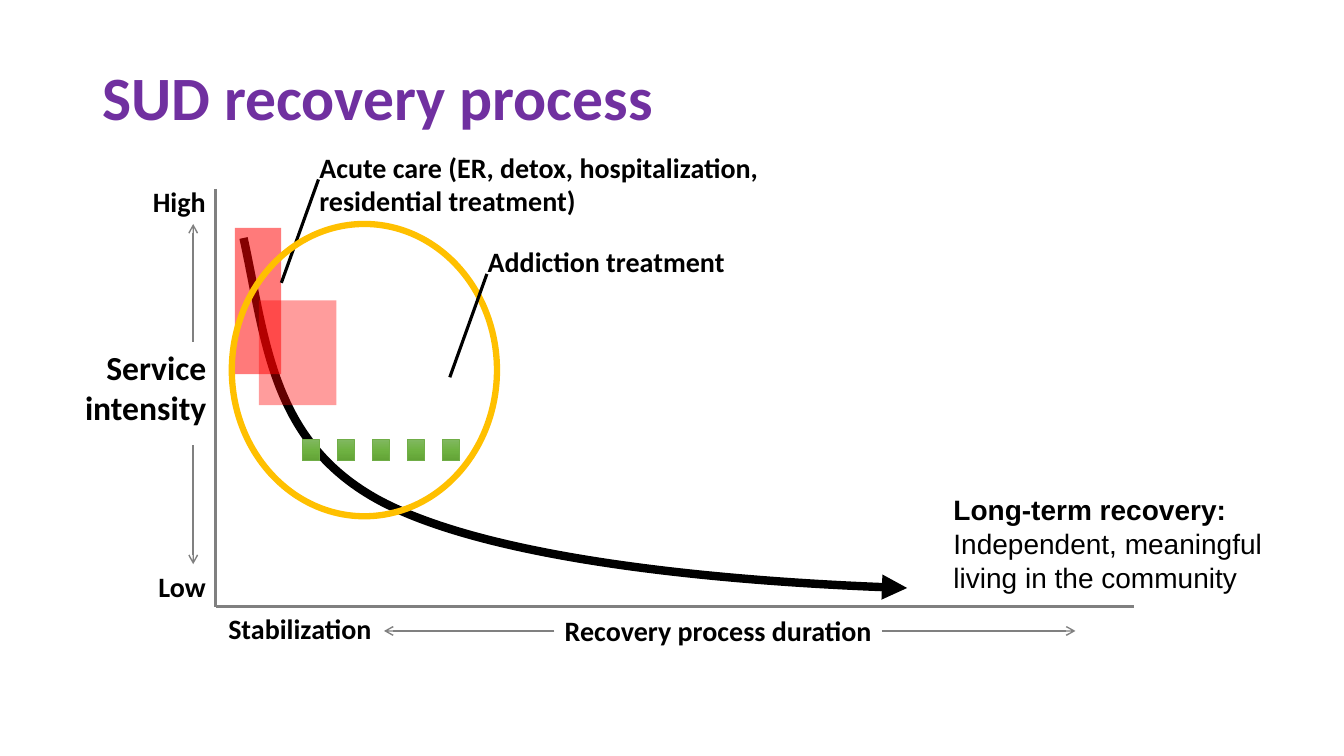
from copy import deepcopy

from pptx import Presentation
from pptx.dml.color import RGBColor
from pptx.enum.shapes import MSO_CONNECTOR, MSO_SHAPE
from pptx.enum.text import MSO_ANCHOR, PP_ALIGN
from pptx.oxml.ns import qn
from pptx.oxml.xmlchemy import OxmlElement
from pptx.util import Pt

RECT, OVAL = MSO_SHAPE.RECTANGLE, MSO_SHAPE.OVAL
STRAIGHT = MSO_CONNECTOR.STRAIGHT
LEFT, CENTER, RIGHT = PP_ALIGN.LEFT, PP_ALIGN.CENTER, PP_ALIGN.RIGHT
MIDDLE, TOP = MSO_ANCHOR.MIDDLE, MSO_ANCHOR.TOP

COLORS = {
    "title": "7030A0", "black": "000000", "axis": "808080", "acute": "FF0000",
    "ring": "FFC000", "green_line": "70AD47",
    "green_top": "81B861", "green_mid": "6FB242", "green_low": "62A336",
}


def rgb(name):
    return RGBColor.from_string(COLORS[name])


def add_text(s, box, lines, size=20, color="black", font="Calibri",
             align=LEFT, anchor=TOP):
    tb = s.shapes.add_textbox(*(Pt(v) for v in box))
    tf = tb.text_frame
    tf.word_wrap = True
    tf.vertical_anchor = anchor
    tf.text = "\n".join(lines)
    for p in tf.paragraphs:
        p.alignment = align
        for r in p.runs:
            r.font.name = font
            r.font.size = Pt(size)
            r.font.bold = True
            r.font.color.rgb = rgb(color)
    return tf


def add_arrowhead(line, kind):
    tail = OxmlElement("a:tailEnd")
    tail.set("type", kind)
    line.get_or_add_ln().append(tail)


def add_line(s, start, end, color, width, head=None):
    cn = s.shapes.add_connector(STRAIGHT, *(Pt(v) for v in (*start, *end)))
    cn.line.color.rgb = rgb(color)
    cn.line.width = Pt(width)
    if head:
        add_arrowhead(cn, head)
    cn._element.spPr.append(OxmlElement("a:effectLst"))


def add_shape(s, kind, box):
    sp = s.shapes.add_shape(kind, *(Pt(v) for v in box))
    sp.shadow.inherit = False
    return sp


def add_title(s, box):
    tf = add_text(s, box, ["SUD recovery process"], 44, "title", anchor=MIDDLE)
    tf.paragraphs[0].line_spacing = 0.9


def add_outcome(s, box):
    tf = add_text(s, box, ["Long-term recovery:",
                           "Independent, meaningful living in the community"], font="Arial")
    tf.paragraphs[1].runs[0].font.bold = False


def add_curve(s, x, y):
    start = (20, 35)
    segments = [[(36, 108), (39.5, 181), (118, 223)],
                [(197.4, 264.6), (371.6, 281.2), (494, 285)]]
    fb = s.shapes.build_freeform(Pt(start[0]), Pt(start[1]))
    fb.add_line_segments([(Pt(a), Pt(b)) for a, b in (seg[-1] for seg in segments)],
                         close=False)
    sp = fb.convert_to_shape(Pt(x), Pt(y))
    for straight, seg in zip(list(sp._element.iter(qn("a:lnTo"))), segments):
        bezier = OxmlElement("a:cubicBezTo")
        for a, b in seg:
            pt = OxmlElement("a:pt")
            pt.set("x", str(Pt(a - start[0])))
            pt.set("y", str(Pt(b - start[1])))
            bezier.append(pt)
        straight.getparent().replace(straight, bezier)
    sp.shadow.inherit = False
    sp.fill.background()
    sp.line.color.rgb = rgb("black")
    sp.line.width = Pt(6)
    add_arrowhead(sp, "triangle")


def add_axes(s, box):
    x, y, w, h = box
    add_line(s, (x, y), (x, y + h), "axis", 2.25)
    add_line(s, (x, y + h), (x + w, y + h), "axis", 2.25)
    labels = [
        ("Service intensity", -108, 109, 108.5, 68, 24, RIGHT),
        ("Recovery process duration", 163.5, 300, 391, 32, 20, CENTER),
        ("High", -60, -7, 60, 32, 20, RIGHT),
        ("Low", -60, 268, 60, 32, 20, RIGHT),
        ("Stabilization", -6.4, 298.5, 133.2, 32, 20, CENTER),
    ]
    for text, dx, dy, tw, th, size, align in labels:
        add_text(s, (x + dx, y + dy, tw, th), [text], size, align=align)
    for begin, end in ((109, 25), (183, 268)):
        add_line(s, (x - 16, y + begin), (x - 16, y + end), "axis", 1, "arrow")
    for begin, end in ((242, 120.3), (476, 614.2)):
        add_line(s, (x + begin, y + 315.7), (x + end, y + 315.7), "axis", 1, "arrow")


def add_acute_block(s, box, opacity):
    sp = add_shape(s, RECT, box)
    sp.fill.solid()
    sp.fill.fore_color.rgb = rgb("acute")
    alpha = OxmlElement("a:alpha")
    alpha.set("val", str(opacity * 1000))
    sp._element.spPr.find(".//" + qn("a:srgbClr")).append(alpha)
    sp.line.fill.background()


def add_callout(s, box, lines):
    x, y = box[:2]
    add_text(s, box, lines)
    add_line(s, (x + 6.5, y + 24.5), (x - 20, y + 98.3), "black", 2.25)


def add_dashes(s, box, count=5, step=25):
    x, y, w, h = box
    for i in range(count):
        sp = add_shape(s, RECT, (x + i * step, y, w, h))
        sp.fill.gradient()
        sp.fill.gradient_angle = 270
        first = sp._element.spPr.find(".//" + qn("a:gs"))
        first.addnext(deepcopy(first))
        stops = zip(sp.fill.gradient_stops, ("green_top", "green_mid", "green_low"))
        for k, (stop, color) in enumerate(stops):
            stop.color.rgb = rgb(color)
            stop.position = k / 2
        sp.line.color.rgb = rgb("green_line")
        sp.line.width = Pt(0.5)


def add_treatment(s, box):
    x, y = box[:2]
    add_acute_block(s, (x + 31, y + 79.5, 55.4, 75), 39)
    add_acute_block(s, (x + 13.8, y + 27.8, 33.1, 104.4), 52)
    add_callout(s, (x + 67, y - 31.3, 394, 55.5),
                ["Acute care (ER, detox, hospitalization,", "residential treatment)"])
    add_dashes(s, (x + 62, y + 179, 12.4, 15))
    ring = add_shape(s, OVAL, (x + 11.6, y + 25, 189.4, 208.8))
    ring.fill.background()
    ring.line.color.rgb = rgb("ring")
    ring.line.width = Pt(4.5)
    add_callout(s, (x + 187.3, y + 36.2, 394, 32), ["Addiction treatment"])


def main():
    prs = Presentation()
    prs.slide_width, prs.slide_height = Pt(960), Pt(540)
    s = prs.slides.add_slide(prs.slide_layouts[6])
    plot = (154, 135, 656, 298.5)
    add_title(s, (66, 10, 828, 123))
    add_outcome(s, (674, 348.5, 272, 80))
    add_curve(s, *plot[:2])
    add_axes(s, plot)
    add_treatment(s, plot)
    prs.save("out.pptx")


if __name__ == "__main__":
    main()
